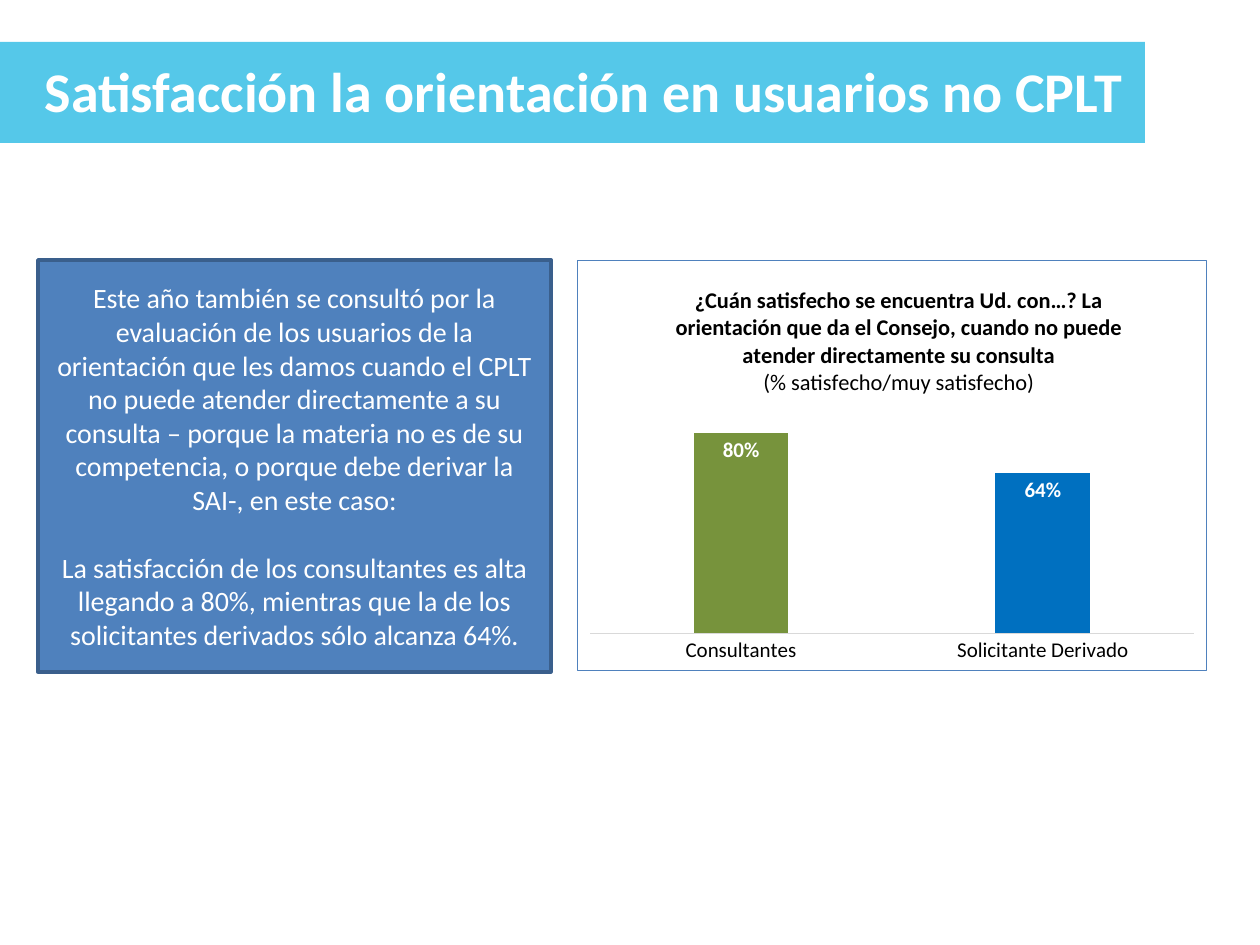
from dataclasses import dataclass

import pptx
import pptx.chart.data
import pptx.dml.color
import pptx.enum.chart
import pptx.enum.shapes
import pptx.enum.text
import pptx.oxml
import pptx.util

EMU_PER_PX = 914400 // 126
FONT = "Calibri"
BLUE = "4F81BD"
WHITE = "FFFFFF"
BLACK = "000000"


@dataclass
class Box:
    left: int
    top: int
    width: int
    height: int

    def emu(self) -> list[int]:
        return [px(n) for n in (self.left, self.top, self.width, self.height)]


@dataclass
class Bar:
    category: str
    value: float
    color: str


BARS = [Bar("Consultantes", 0.8, "77933C"), Bar("Solicitante Derivado", 0.64, "0070C0")]
FINDINGS = [
    "Este año también se consultó por la evaluación de los usuarios de la orientación "
    "que les damos cuando el CPLT no puede atender directamente a su consulta – porque "
    "la materia no es de su competencia, o porque debe derivar la SAI-, en este caso:",
    "La satisfacción de los consultantes es alta llegando a 80%, mientras que la de los "
    "solicitantes derivados sólo alcanza 64%.",
]
QUESTION = (
    "¿Cuán satisfecho se encuentra Ud. con…? La orientación que da el Consejo, "
    "cuando no puede atender directamente su consulta"
)
MEASURE = "(% satisfecho/muy satisfecho)"


def px(length: int) -> int:
    return pptx.util.Emu(length * EMU_PER_PX)


def rgb(color: str) -> pptx.dml.color.RGBColor:
    return pptx.dml.color.RGBColor.from_string(color)


def set_font(font, size: float, color: str, bold: bool = False) -> None:
    font.name = FONT
    font.size = pptx.util.Pt(size)
    font.bold = bold
    font.color.rgb = rgb(color)


def add_run(paragraph, text: str, size: float, color: str, bold: bool = False) -> None:
    run = paragraph.add_run()
    run.text = text
    set_font(run.font, size, color, bold)


def add_rectangle(slide, box: Box, fill: str):
    shape = slide.shapes.add_shape(pptx.enum.shapes.MSO_SHAPE.RECTANGLE, *box.emu())
    shape.shadow.inherit = False
    shape.fill.solid()
    shape.fill.fore_color.rgb = rgb(fill)
    shape.line.fill.background()
    return shape


def add_title(slide) -> None:
    band = add_rectangle(slide, Box(0, 42, 1145, 101), "55C8E9")
    title = slide.shapes.title
    title.element.addprevious(band.element)
    title.left, title.top, title.width, title.height = Box(32, 50, 1113, 81).emu()
    frame = title.text_frame
    frame.word_wrap = False
    frame.auto_size = pptx.enum.text.MSO_AUTO_SIZE.NONE
    frame.vertical_anchor = pptx.enum.text.MSO_ANCHOR.TOP
    paragraph = frame.paragraphs[0]
    paragraph.alignment = pptx.enum.text.PP_ALIGN.LEFT
    add_run(paragraph, "Satisfacción la orientación en usuarios no CPLT", 32, WHITE, True)


def add_findings(slide) -> None:
    shape = add_rectangle(slide, Box(38, 260, 513, 412), BLUE)
    shape.line.color.rgb = rgb("3A5F8C")
    shape.line.width = pptx.util.Pt(2)
    frame = shape.text_frame
    frame.word_wrap = True
    frame.vertical_anchor = pptx.enum.text.MSO_ANCHOR.MIDDLE
    for index, text in enumerate(FINDINGS):
        paragraph = frame.add_paragraph() if index else frame.paragraphs[0]
        paragraph.alignment = pptx.enum.text.PP_ALIGN.CENTER
        if index:
            paragraph.space_before = pptx.util.Pt(19.5)
        add_run(paragraph, text, 16, WHITE)


def layout_xml(target: str, values: dict[str, float]):
    modes = "".join(f'<c:{axis}Mode val="edge"/>' for axis in "xy")
    sizes = "".join(f'<c:{key} val="{value}"/>' for key, value in values.items())
    return pptx.oxml.parse_xml(
        '<c:layout xmlns:c="http://schemas.openxmlformats.org/drawingml/2006/chart">'
        f"<c:manualLayout>{target}{modes}{sizes}</c:manualLayout></c:layout>"
    )


def replace_layout(parent, layout, index: int) -> None:
    for old in parent.xpath("c:layout"):
        parent.remove(old)
    parent.insert(index, layout)


def frame_chart(chart) -> None:
    properties = pptx.oxml.parse_xml(
        '<c:spPr xmlns:c="http://schemas.openxmlformats.org/drawingml/2006/chart" '
        'xmlns:a="http://schemas.openxmlformats.org/drawingml/2006/main">'
        f'<a:solidFill><a:srgbClr val="{WHITE}"/></a:solidFill>'
        f'<a:ln w="9525"><a:solidFill><a:srgbClr val="{BLUE}"/></a:solidFill></a:ln></c:spPr>'
    )
    chart.element.xpath("c:chart")[0].addnext(properties)


def add_chart_title(chart) -> None:
    frame = chart.chart_title.text_frame
    add_run(frame.paragraphs[0], QUESTION, 12.8, BLACK, True)
    add_run(frame.add_paragraph(), MEASURE, 12.8, BLACK)
    chart.chart_title.include_in_layout = False


def format_axes(chart) -> None:
    category_axis = chart.category_axis
    category_axis.major_tick_mark = pptx.enum.chart.XL_TICK_MARK.NONE
    category_axis.format.line.color.rgb = rgb("D9D9D9")
    category_axis.format.line.width = pptx.util.Pt(0.75)
    set_font(category_axis.tick_labels.font, 12, BLACK)
    value_axis = chart.value_axis
    value_axis.visible = False
    value_axis.has_major_gridlines = False
    value_axis.minimum_scale = 0
    value_axis.maximum_scale = 1


def format_bars(plot) -> None:
    plot.gap_width = 219
    plot.overlap = -27
    plot.vary_by_categories = False
    series = plot.series[0]
    series.format.fill.solid()
    series.format.fill.fore_color.rgb = rgb(BLUE)
    for index, bar in enumerate(BARS):
        fill = series.points[index].format.fill
        fill.solid()
        fill.fore_color.rgb = rgb(bar.color)
    labels = series.data_labels
    labels.show_value = True
    labels.number_format = "0%"
    labels.number_format_is_linked = False
    labels.position = pptx.enum.chart.XL_LABEL_POSITION.INSIDE_END
    set_font(labels.font, 12, WHITE, True)


def add_satisfaction_chart(slide) -> None:
    data = pptx.chart.data.CategoryChartData(number_format="0%")
    data.categories = [bar.category for bar in BARS]
    data.add_series("Series 1", [bar.value for bar in BARS])
    chart = slide.shapes.add_chart(
        pptx.enum.chart.XL_CHART_TYPE.COLUMN_CLUSTERED, *Box(577, 260, 630, 411).emu(), data
    ).chart
    set_font(chart.font, 10.5, BLACK)
    chart.has_legend = False
    add_chart_title(chart)
    format_axes(chart)
    format_bars(chart.plots[0])
    frame_chart(chart)
    title = chart.element.xpath("c:chart/c:title")[0]
    replace_layout(title, layout_xml("", {"x": 0.15, "y": 0.05}), 1)
    plot_area = chart.element.xpath("c:chart/c:plotArea")[0]
    plot_box = {"x": 0.02, "y": 0.3, "w": 0.96, "h": 0.61}
    replace_layout(plot_area, layout_xml('<c:layoutTarget val="inner"/>', plot_box), 0)


def main() -> None:
    presentation = pptx.Presentation()
    presentation.slide_width = pptx.util.Inches(10)
    presentation.slide_height = pptx.util.Inches(7.5)
    slide = presentation.slides.add_slide(presentation.slide_layouts[5])
    add_title(slide)
    add_findings(slide)
    add_satisfaction_chart(slide)
    presentation.save("out.pptx")


if __name__ == "__main__":
    main()
